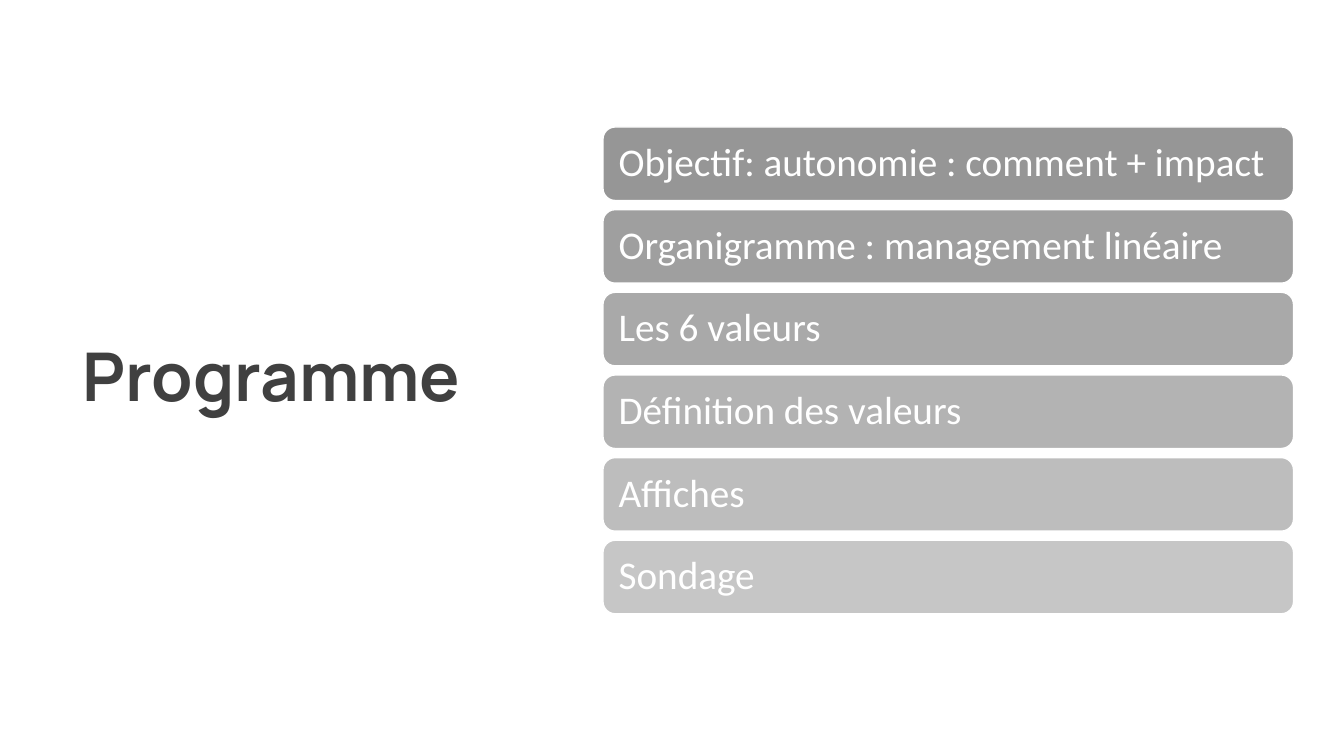
import pptx
import pptx.util
import pptx.dml.color
import pptx.enum.shapes
import pptx.enum.text

Inches = pptx.util.Inches
Pt = pptx.util.Pt
ANCHOR = pptx.enum.text.MSO_ANCHOR
LEFT_ALIGN = pptx.enum.text.PP_ALIGN.LEFT

TITLE = "Programme"
AGENDA = [
    ("Objectif: autonomie : comment + impact", "969696"),
    ("Organigramme : management linéaire", "9F9F9F"),
    ("Les 6 valeurs", "A9A9A9"),
    ("Définition des valeurs", "B3B3B3"),
    ("Affiches", "BDBDBD"),
    ("Sondage", "C6C6C6"),
]
BAR_LEFT, BAR_TOP, BAR_WIDTH, BAR_HEIGHT = 5.98, 1.26, 6.85, 0.73
BAR_STEP = 0.82
BAR_INSET = 0.12


def rgb(value):
    return pptx.dml.color.RGBColor.from_string(value)


def write(tf, text, font, size, color, anchor, bold=False):
    tf.text = text
    tf.word_wrap = True
    tf.auto_size = pptx.enum.text.MSO_AUTO_SIZE.NONE
    tf.vertical_anchor = anchor
    p = tf.paragraphs[0]
    p.alignment = LEFT_ALIGN
    p.line_spacing = 0.9
    r = p.runs[0]
    r.font.name = font
    r.font.size = Pt(size)
    r.font.bold = bold
    r.font.color.rgb = rgb(color)


def add_bar(s, index, text, color):
    sp = s.shapes.add_shape(
        pptx.enum.shapes.MSO_SHAPE.ROUNDED_RECTANGLE,
        Inches(BAR_LEFT), Inches(BAR_TOP + index * BAR_STEP),
        Inches(BAR_WIDTH), Inches(BAR_HEIGHT))
    sp.shadow.inherit = False
    sp.fill.solid()
    sp.fill.fore_color.rgb = rgb(color)
    sp.line.color.rgb = rgb("FFFFFF")
    sp.line.width = Pt(1)
    tf = sp.text_frame
    tf.margin_left = tf.margin_right = Inches(BAR_INSET)
    tf.margin_top = tf.margin_bottom = Inches(BAR_INSET)
    write(tf, text, "Calibri", 28, "FFFFFF", ANCHOR.MIDDLE)


def main():
    prs = pptx.Presentation()
    prs.slide_width, prs.slide_height = Inches(13.33), Inches(7.5)
    s = prs.slides.add_slide(prs.slide_layouts[5])
    title = s.shapes.title
    title.left, title.top = Inches(0.72), Inches(3.2)
    title.width, title.height = Inches(4.94), Inches(0.98)
    write(title.text_frame, TITLE, "Manrope", 48, "404040", ANCHOR.BOTTOM, True)
    for index, (text, color) in enumerate(AGENDA):
        add_bar(s, index, text, color)
    prs.save("out.pptx")


if __name__ == "__main__":
    main()
